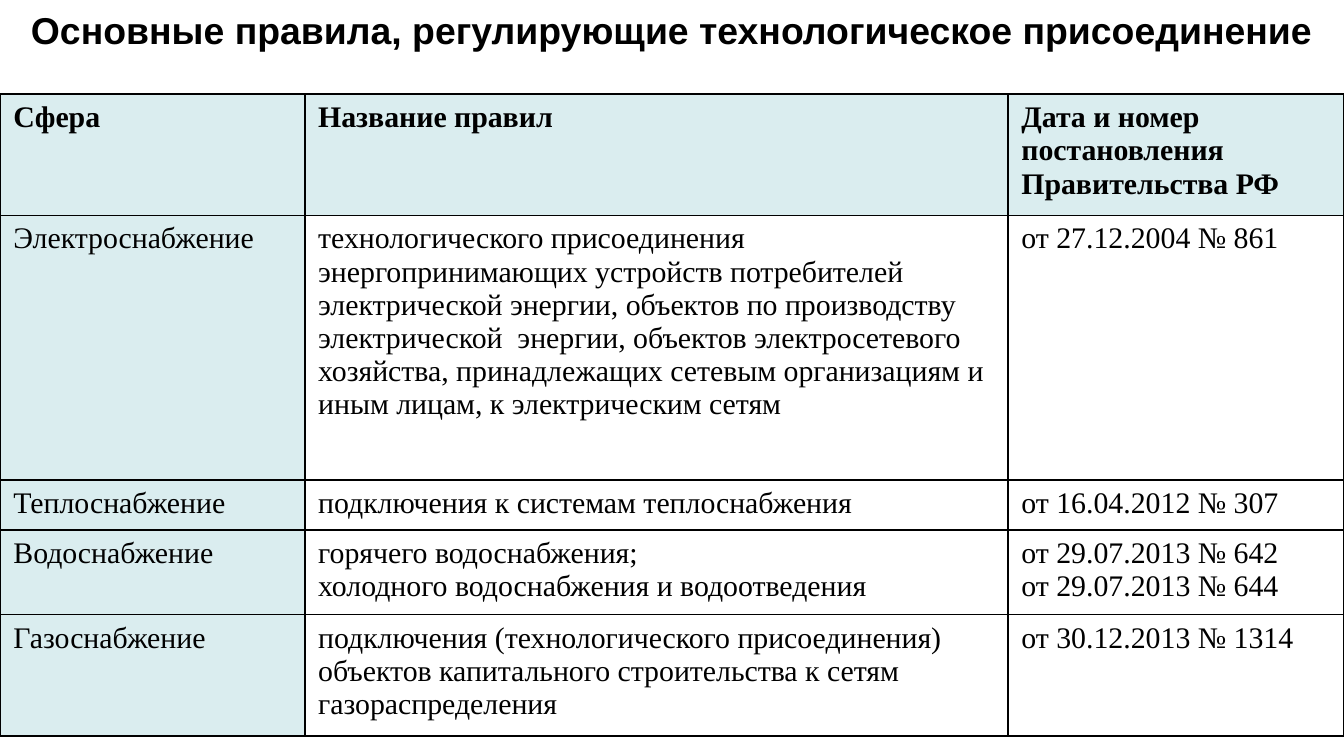
from pptx import Presentation
from pptx.dml.color import RGBColor
from pptx.enum.text import MSO_ANCHOR as Anchor, PP_ALIGN as Align
from pptx.oxml import parse_xml
from pptx.oxml.ns import nsdecls
from pptx.util import Cm, Pt


def color(code):
    return RGBColor.from_string(code)


def style(para, name, size, bold):
    font = para.font
    font.name, font.size, font.bold = name, Pt(size), bold
    font.color.rgb = color("000000")


deck = Presentation()
deck.slide_width, deck.slide_height = Cm(25.4), Cm(14.28)
slide = deck.slides.add_slide(deck.slide_layouts[5])

# Title
title = slide.shapes.title
title.left, title.top, title.width, title.height = Cm(0), Cm(0), Cm(25.4), Cm(1.12)
frame = title.text_frame
frame.text = "Основные правила, регулирующие технологическое присоединение"
frame.word_wrap = True
frame.vertical_anchor = Anchor.TOP
frame.paragraphs[0].alignment = Align.CENTER
style(frame.paragraphs[0], "Arial", 20, True)

# Table content: a line break starts a new paragraph
rows = [
    ("Сфера", "Название правил", "Дата и номер постановления Правительства РФ"),
    ("Электроснабжение",
     "технологического присоединения энергопринимающих устройств потребителей "
     "электрической энергии, объектов по производству электрической  энергии, "
     "объектов электросетевого хозяйства, принадлежащих сетевым организациям "
     "и иным лицам, к электрическим сетям",
     "от 27.12.2004 № 861"),
    ("Теплоснабжение", "подключения к системам теплоснабжения", "от 16.04.2012 № 307"),
    ("Водоснабжение",
     "горячего водоснабжения;\nхолодного водоснабжения и водоотведения",
     "от 29.07.2013 № 642\nот 29.07.2013 № 644"),
    ("Газоснабжение",
     "подключения (технологического присоединения) объектов капитального "
     "строительства к сетям газораспределения",
     "от 30.12.2013 № 1314"),
]
widths = [5.76, 13.29, 6.35]
heights = [2.29, 5, 0.94, 1.6, 2.29]

# Table grid
table = slide.shapes.add_table(len(rows), len(widths), Cm(0), Cm(1.78),
                               Cm(sum(widths)), Cm(sum(heights))).table
for col, width in zip(table.columns, widths):
    col.width = Cm(width)
for row, height in zip(table.rows, heights):
    row.height = Cm(height)

# Cells: tinted header row and first column, black borders
for r, texts in enumerate(rows):
    for c, text in enumerate(texts):
        cell = table.cell(r, c)
        cell.text = text
        for para in cell.text_frame.paragraphs:
            style(para, "Times New Roman", 16, r == 0)
        props = cell._tc.get_or_add_tcPr()
        for side in "LRTB":
            props.append(parse_xml(
                f'<a:ln{side} {nsdecls("a")} w="12700"><a:solidFill>'
                f'<a:srgbClr val="000000"/></a:solidFill></a:ln{side}>'))
        cell.fill.solid()
        cell.fill.fore_color.rgb = color("DAEDEF" if r == 0 or c == 0 else "FFFFFF")

deck.save("out.pptx")
